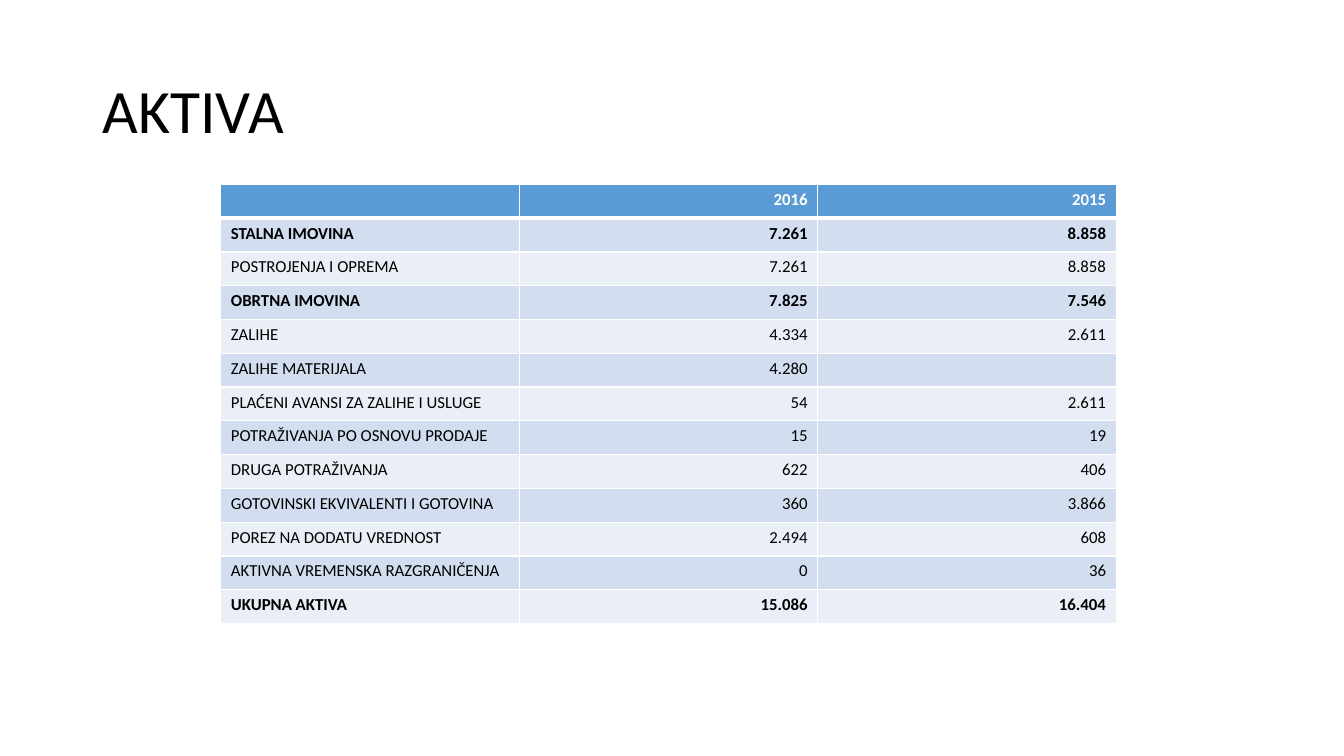
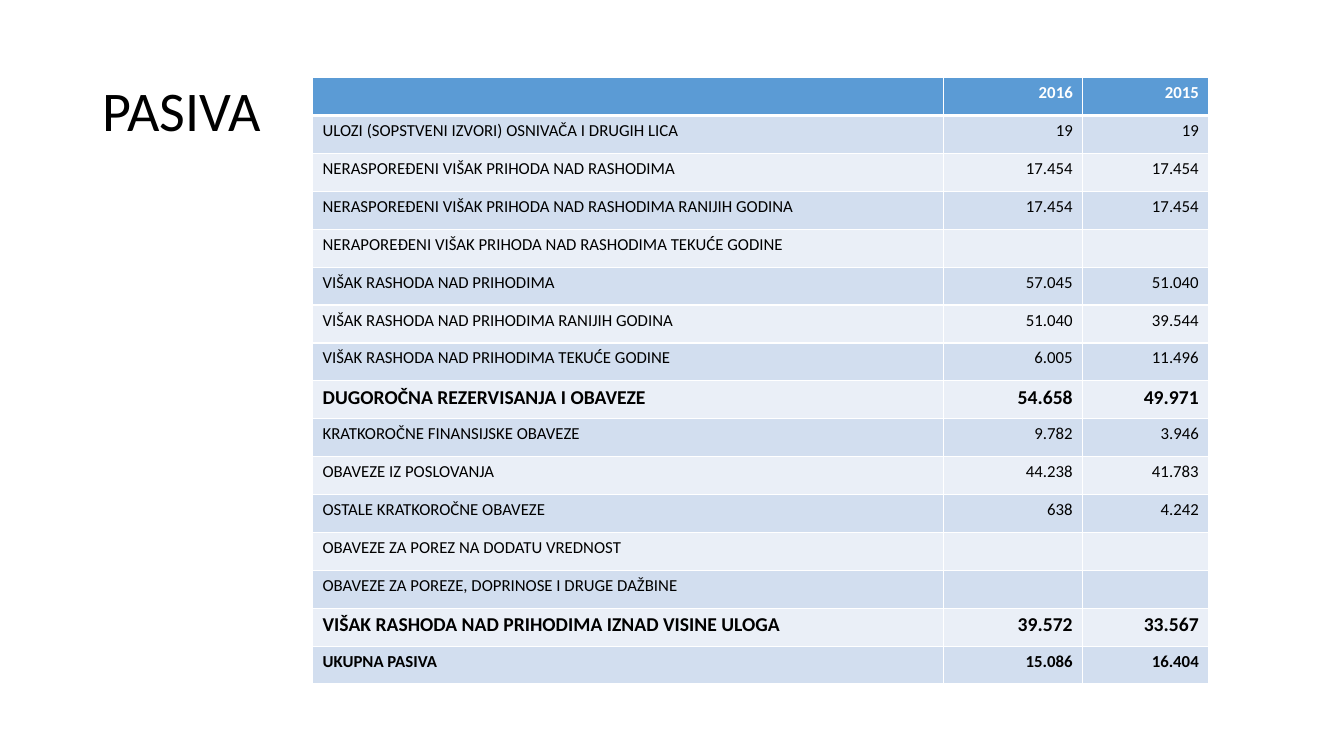
from lxml.etree import SubElement as Sub
from pptx import Presentation as Deck
from pptx.dml.color import RGBColor as Rgb
from pptx.enum.text import MSO_ANCHOR as Anchor, PP_ALIGN as Align
from pptx.oxml.ns import qn
from pptx.util import Inches, Pt

HUES = {"head": "5B9BD5", "dark": "D2DEEF", "light": "EAEFF7",
        "text": "000000", "white": "FFFFFF"}
FONT = "Calibri"
YEARS = ("", "2016", "2015")

# Label, two years and, for bold rows, the text size
ASSETS = [
    ("STALNA IMOVINA", "7.261", "8.858", 12),
    ("POSTROJENJA I OPREMA", "7.261", "8.858"),
    ("OBRTNA IMOVINA", "7.825", "7.546", 12),
    ("ZALIHE", "4.334", "2.611"),
    ("ZALIHE MATERIJALA", "4.280", ""),
    ("PLAĆENI AVANSI ZA ZALIHE I USLUGE", "54", "2.611"),
    ("POTRAŽIVANJA PO OSNOVU PRODAJE", "15", "19"),
    ("DRUGA POTRAŽIVANJA", "622", "406"),
    ("GOTOVINSKI EKVIVALENTI I GOTOVINA", "360", "3.866"),
    ("POREZ NA DODATU VREDNOST", "2.494", "608"),
    ("AKTIVNA VREMENSKA RAZGRANIČENJA", "0", "36"),
    ("UKUPNA AKTIVA", "15.086", "16.404", 12),
]
DEBTS = [
    ("ULOZI (SOPSTVENI IZVORI) OSNIVAČA I DRUGIH LICA", "19", "19"),
    ("NERASPOREĐENI VIŠAK PRIHODA NAD RASHODIMA", "17.454", "17.454"),
    ("NERASPOREĐENI VIŠAK PRIHODA NAD RASHODIMA RANIJIH GODINA", "17.454", "17.454"),
    ("NERAPOREĐENI VIŠAK PRIHODA NAD RASHODIMA TEKUĆE GODINE", "", ""),
    ("VIŠAK RASHODA NAD PRIHODIMA", "57.045", "51.040"),
    ("VIŠAK RASHODA NAD PRIHODIMA RANIJIH GODINA", "51.040", "39.544"),
    ("VIŠAK RASHODA NAD PRIHODIMA TEKUĆE GODINE", "6.005", "11.496"),
    ("DUGOROČNA REZERVISANJA I OBAVEZE", "54.658", "49.971", 14),
    ("KRATKOROČNE FINANSIJSKE OBAVEZE", "9.782", "3.946"),
    ("OBAVEZE IZ POSLOVANJA", "44.238", "41.783"),
    ("OSTALE KRATKOROČNE OBAVEZE", "638", "4.242"),
    ("OBAVEZE ZA POREZ NA DODATU VREDNOST", "", ""),
    ("OBAVEZE ZA POREZE, DOPRINOSE I DRUGE DAŽBINE", "", ""),
    ("VIŠAK RASHODA NAD PRIHODIMA IZNAD VISINE ULOGA", "39.572", "33.567", 14),
    ("UKUPNA PASIVA", "15.086", "16.404", 12),
]


def write(frame, text, size=12, hue="text", bold=False, align=Align.LEFT, space=None):
    par = frame.paragraphs[0]
    par.alignment = align
    par.line_spacing = space
    if not text:
        # An empty cell keeps the row's text size
        Sub(par._p, qn("a:endParaRPr"), sz=str(size * 100))
        return
    run = par.add_run()
    run.text = text
    font = run.font
    font.name, font.size, font.bold = FONT, Pt(size), bold
    font.color.rgb = Rgb.from_string(HUES[hue])


class Show:
    def __init__(self):
        self.deck = Deck()
        self.deck.slide_width = Inches(13.33)
        self.deck.slide_height = Inches(7.5)
        self.slide = None

    def start(self, title, size):
        self.slide = self.deck.slides.add_slide(self.deck.slide_layouts[5])
        self.slide.background.fill.solid()
        self.slide.background.fill.fore_color.rgb = Rgb.from_string(HUES["white"])
        box = self.slide.shapes.title
        box.left, box.top = Inches(0.92), Inches(0.4)
        box.width, box.height = Inches(11.5), Inches(1.45)
        frame = box.text_frame
        frame.vertical_anchor = Anchor.MIDDLE
        write(frame, title, size, space=0.9)

    def edge(self, cell, row):
        # The rule under the header is the thick one
        wide = {"T": 3 if row == 1 else 1, "B": 3 if row == 0 else 1}
        props = cell._tc.get_or_add_tcPr()
        for side in "LRTB":
            line = Sub(props, qn(f"a:ln{side}"), w=str(Pt(wide.get(side, 1))))
            fill = Sub(line, qn("a:solidFill"))
            Sub(fill, qn("a:srgbClr"), val=HUES["white"])

    def table(self, left, top, cols, high, rows):
        count = len(rows) + 1
        grid = self.slide.shapes.add_table(
            count, len(cols), Inches(left), Inches(top),
            Inches(sum(cols)), Inches(high)).table
        for col, wide in zip(grid.columns, cols):
            col.width = Inches(wide)
        for r, (label, new, old, *mark) in enumerate([YEARS, *rows]):
            grid.rows[r].height = Inches(high / count)
            band = "head" if r == 0 else "dark" if r % 2 else "light"
            for c, text in enumerate((label, new, old)):
                cell = grid.cell(r, c)
                self.edge(cell, r)
                cell.fill.solid()
                cell.fill.fore_color.rgb = Rgb.from_string(HUES[band])
                write(cell.text_frame, text, size=mark[0] if mark else 12,
                      hue="text" if r else "white", bold=r == 0 or bool(mark),
                      align=Align.RIGHT if c else Align.LEFT)


def main():
    show = Show()

    # Assets
    show.start("AKTIVA", 44)
    show.table(2.19, 1.83, [2.96] * 3, 4.36, ASSETS)

    # Liabilities
    show.start("PASIVA", 40)
    show.table(3.1, 0.77, [6.26, 1.38, 1.25], 6.02, DEBTS)

    show.deck.save("out.pptx")


if __name__ == "__main__":
    main()
